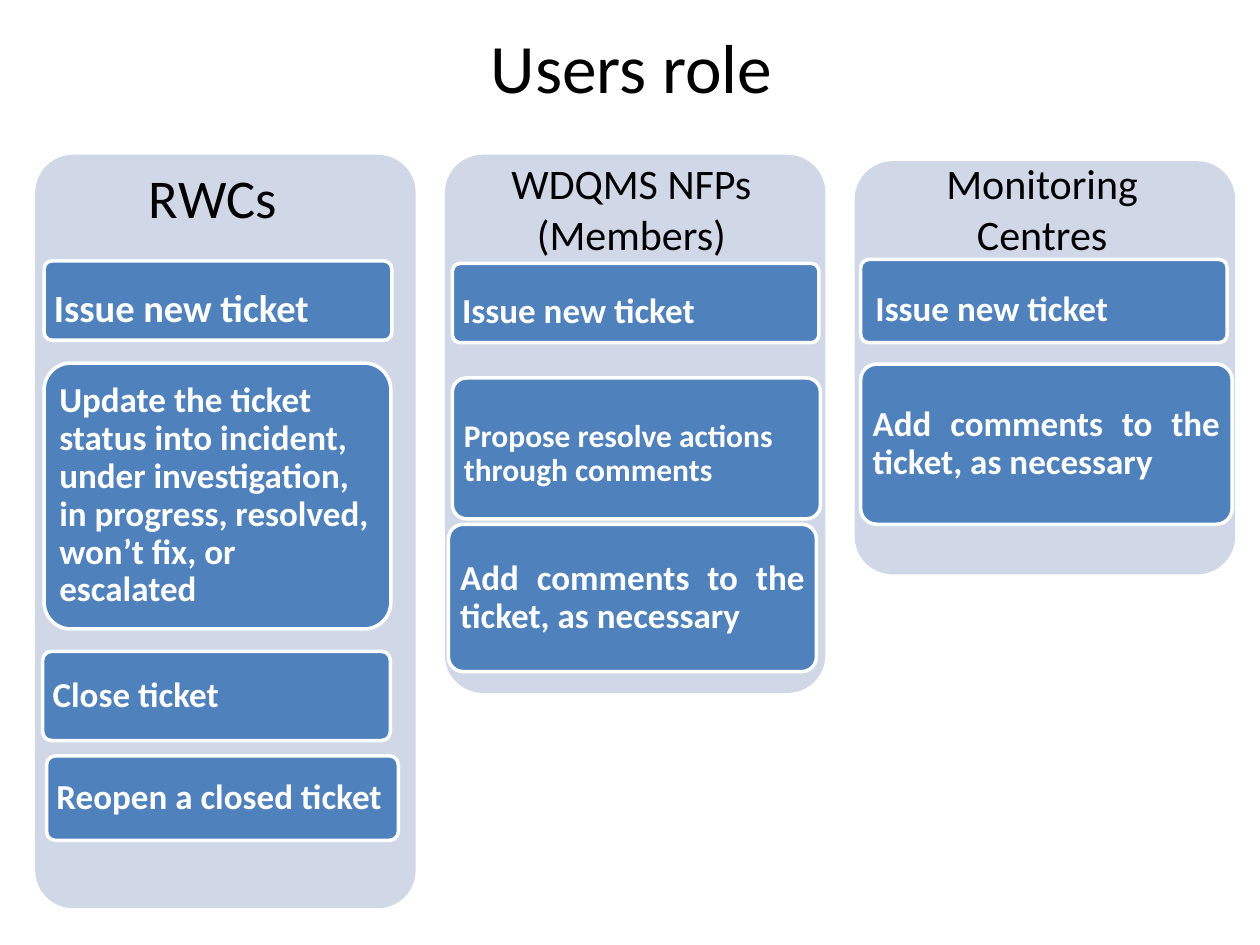
import pptx
import pptx.util
import pptx.dml.color
import pptx.enum.shapes
import pptx.enum.text
from dataclasses import dataclass

Cm, Pt = pptx.util.Cm, pptx.util.Pt
RGB = pptx.dml.color.RGBColor.from_string
ALIGN = pptx.enum.text.PP_ALIGN
MID = pptx.enum.text.MSO_ANCHOR.MIDDLE
ROUND = pptx.enum.shapes.MSO_SHAPE.ROUNDED_RECTANGLE


@dataclass(frozen=True)
class Theme:
    font: str = "Calibri"
    panel: str = "D0D8E8"
    card: str = "4F81BD"
    light: str = "FFFFFF"
    dark: str = "000000"
    title: float = 39.6
    large: float = 31.2
    head: float = 24
    big: float = 22
    body: float = 20
    small: float = 18


THEME = Theme()
PANEL_X, PITCH, PANEL_W = 0.71, 8.26, 7.67

# Panels: top, height
PANELS = [(3.12, 15.19), (3.12, 10.85), (3.25, 8.33)]

# Headings: text, box, size
HEADS = [
    ("RWCs", (1.09, 2.95, 6.4, 2.01), THEME.large),
    ("WDQMS NFPs (Members)", (9.53, 3.4, 6.4, 1.6), THEME.head),
    ("Monitoring Centres", (17.81, 3.4, 6.4, 1.6), THEME.head),
]

# Cards: text, box, options (drop lowers the text, pad is the side inset)
ISSUE = "Issue new ticket"
ADD = "Add comments to the ticket, as necessary"
JUST = {"align": ALIGN.JUSTIFY}
CARDS = [
    (ISSUE, (0.89, 5.26, 7.01, 1.6), {**JUST, "size": THEME.big, "drop": 0.38}),
    ("Update the ticket status into incident, under investigation, "
     "in progress, resolved, won’t fix, or escalated",
     (0.89, 7.32, 6.99, 5.36), {}),
    ("Close ticket", (0.86, 13.13, 7.01, 1.8), JUST),
    ("Reopen a closed ticket", (0.94, 15.24, 7.09, 1.7), {}),
    (ISSUE, (9.12, 5.31, 7.39, 1.6), {**JUST, "drop": 0.38}),
    ("Propose resolve actions through comments",
     (9.12, 7.62, 7.42, 2.84), {"size": THEME.small, "drop": 0.25}),
    (ADD, (9.04, 10.57, 7.42, 2.97), JUST),
    (ISSUE, (17.35, 5.23, 7.39, 1.68), {**JUST, "drop": 0.38, "pad": 0.25}),
    (ADD, (17.35, 7.34, 7.49, 3.23), JUST),
]


def apply(item, form):
    for name, value in form.items():
        setattr(item, name, value)


def write(shape, text, size, color, align, bold=False, space=1.0):
    frame = shape.text_frame
    apply(frame, {"word_wrap": True, "vertical_anchor": MID,
                  "auto_size": pptx.enum.text.MSO_AUTO_SIZE.NONE})
    para = frame.paragraphs[0]
    para.text = text
    apply(para, {"alignment": align, "line_spacing": space})
    apply(para.font, {"name": THEME.font, "size": Pt(size), "bold": bold})
    para.font.color.rgb = RGB(color)


def add_box(slide, box, fill):
    shape = slide.shapes.add_shape(ROUND, *map(Cm, box))
    shape.shadow.inherit = False
    shape.adjustments[0] = 0.1
    shape.fill.solid()
    shape.fill.fore_color.rgb = RGB(fill)
    shape.line.fill.background()
    return shape


def add_card(slide, text, box, size=THEME.body, align=ALIGN.LEFT,
             drop=0, pad=0.15):
    card = add_box(slide, box, THEME.card)
    card.line.color.rgb = RGB(THEME.light)
    card.line.width = Pt(2)
    apply(card.text_frame, {
        "margin_left": Cm(pad), "margin_right": Cm(0.15),
        "margin_top": Cm(0.1 + drop), "margin_bottom": Cm(0.1)})
    write(card, text, size, THEME.light, align, bold=True, space=0.9)


def add_head(slide, text, box, size):
    head = slide.shapes.add_textbox(*map(Cm, box))
    write(head, text, size, THEME.dark, ALIGN.CENTER)


def set_title(slide, text):
    title = slide.shapes.title
    apply(title, {"left": Cm(1.3), "top": Cm(0.33),
                  "width": Cm(22.86), "height": Cm(2.01)})
    write(title, text, THEME.title, THEME.dark, ALIGN.CENTER)


def main():
    deck = pptx.Presentation()
    apply(deck, {"slide_width": Cm(25.4), "slide_height": Cm(19.05)})
    slide = deck.slides.add_slide(deck.slide_layouts[5])
    set_title(slide, "Users role")

    # Column backgrounds
    for i, (top, high) in enumerate(PANELS):
        add_box(slide, (PANEL_X + i * PITCH, top, PANEL_W, high), THEME.panel)

    # Column headings and role cards
    for text, box, size in HEADS:
        add_head(slide, text, box, size)
    for text, box, form in CARDS:
        add_card(slide, text, box, **form)

    deck.save("out.pptx")


if __name__ == "__main__":
    main()
